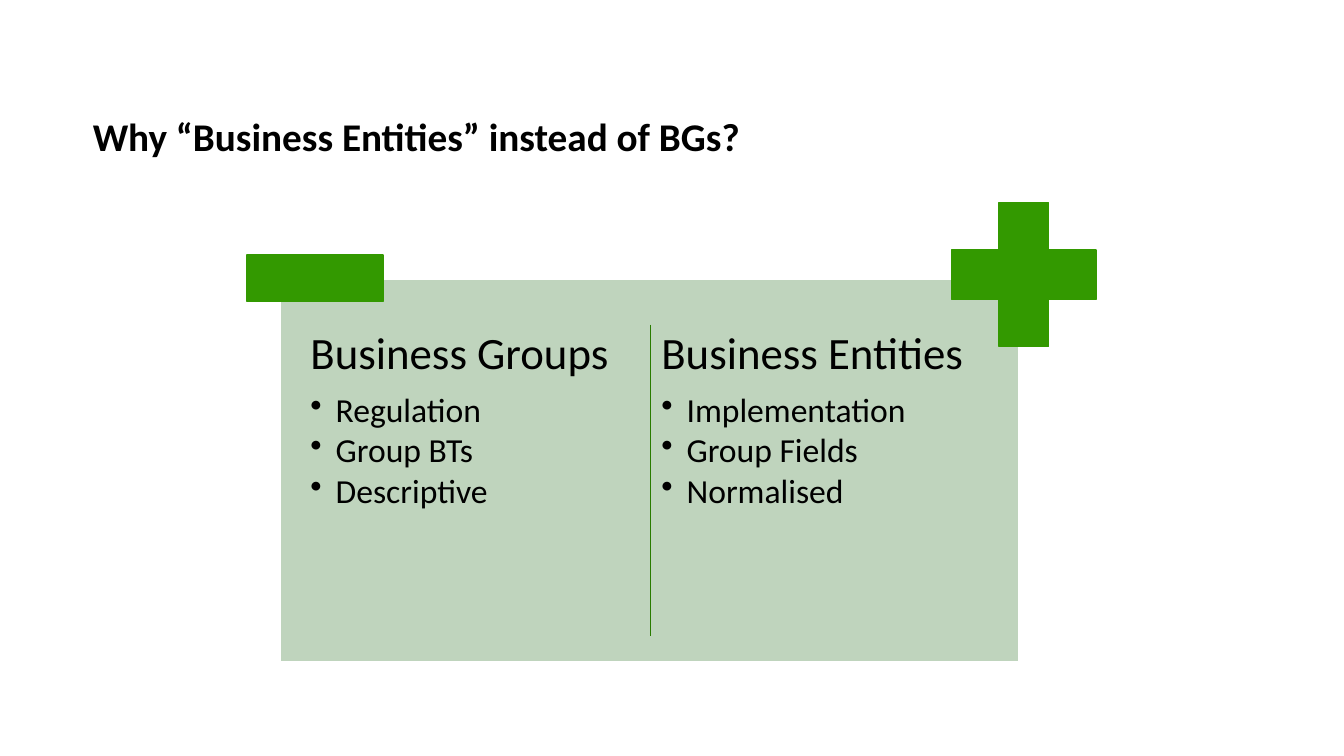
from lxml import etree
from pptx import Presentation
from pptx.dml.color import RGBColor
from pptx.enum.shapes import MSO_CONNECTOR, MSO_SHAPE
from pptx.enum.text import MSO_ANCHOR, MSO_AUTO_SIZE, PP_ALIGN
from pptx.oxml.ns import qn
from pptx.util import Inches, Pt

RECTANGLE, CROSS = MSO_SHAPE.RECTANGLE, MSO_SHAPE.CROSS
STRAIGHT = MSO_CONNECTOR.STRAIGHT
TOP, BOTTOM = MSO_ANCHOR.TOP, MSO_ANCHOR.BOTTOM
LEFT = PP_ALIGN.LEFT
NO_FIT = MSO_AUTO_SIZE.NONE

COLOURS = {"panel": "BFD4BD", "sign": "339900", "divider": "297B00",
           "white": "FFFFFF", "text": "000000"}
COLUMNS = [
    (3.01, "Business Groups", ["Regulation", "Group BTs", "Descriptive"]),
    (6.49, "Business Entities", ["Implementation", "Group Fields", "Normalised"]),
]


def colour(name):
    return RGBColor.from_string(COLOURS[name])


def write(para, text, size=24, bold=False, after=0, bullet=False):
    para.alignment = LEFT
    para.line_spacing = 0.9
    para.space_before = Pt(0)
    para.space_after = Pt(after)
    if bullet:
        para.level = 1
        properties = para._p.get_or_add_pPr()
        properties.set("marL", str(Inches(0.25)))
        properties.set("indent", str(-Inches(0.25)))
        etree.SubElement(properties, qn("a:buChar")).set("char", "•")
    span = para.add_run()
    span.text = text
    span.font.name = "Calibri"
    span.font.size = Pt(size)
    span.font.bold = bold
    span.font.color.rgb = colour("text")


deck = Presentation()
deck.slide_width, deck.slide_height = Inches(13.33), Inches(7.5)
slide = deck.slides.add_slide(deck.slide_layouts[5])

# Title
title = slide.shapes.title
title.left, title.top = Inches(0.92), Inches(0.14)
title.width, title.height = Inches(11.48), Inches(1.45)
frame = title.text_frame
frame.auto_size = NO_FIT
frame.word_wrap = True
frame.vertical_anchor = BOTTOM
frame.margin_left = frame.margin_right = frame.margin_bottom = 0
frame.margin_top = Inches(0.05)
write(frame.paragraphs[0], "Why “Business Entities” instead of BGs?", size=28, bold=True)

# Panel with plus and minus signs
for kind, place, fill, line in [
    (RECTANGLE, (2.78, 2.77, 7.32, 3.79), "panel", "white"),
    (CROSS, (9.44, 2.01, 1.43, 1.43), "sign", "sign"),
    (RECTANGLE, (2.45, 2.53, 1.35, 0.46), "sign", "sign"),
]:
    shape = slide.shapes.add_shape(kind, *map(Inches, place))
    shape.shadow.inherit = False
    shape.fill.solid()
    shape.fill.fore_color.rgb = colour(fill)
    shape.line.color.rgb = colour(line)
    shape.line.width = Pt(1)
    if kind == CROSS:
        shape.adjustments[0] = 0.328

# Text columns
for left, heading, points in COLUMNS:
    box = slide.shapes.add_textbox(Inches(left), Inches(3.21), Inches(3.4), Inches(3.24))
    frame = box.text_frame
    frame.word_wrap = True
    frame.vertical_anchor = TOP
    frame.margin_left = frame.margin_right = Inches(0.07)
    frame.margin_top = frame.margin_bottom = Inches(0.07)
    write(frame.paragraphs[0], heading, size=32, after=10)
    for point in points:
        write(frame.add_paragraph(), point, after=3.2, bullet=True)

# Divider between the columns
divider = slide.shapes.add_connector(
    STRAIGHT, Inches(6.45), Inches(3.22), Inches(6.45), Inches(6.31))
divider.line.color.rgb = colour("divider")
divider.line.width = Pt(1)
etree.SubElement(divider._element.spPr, qn("a:effectLst"))

deck.save("out.pptx")
